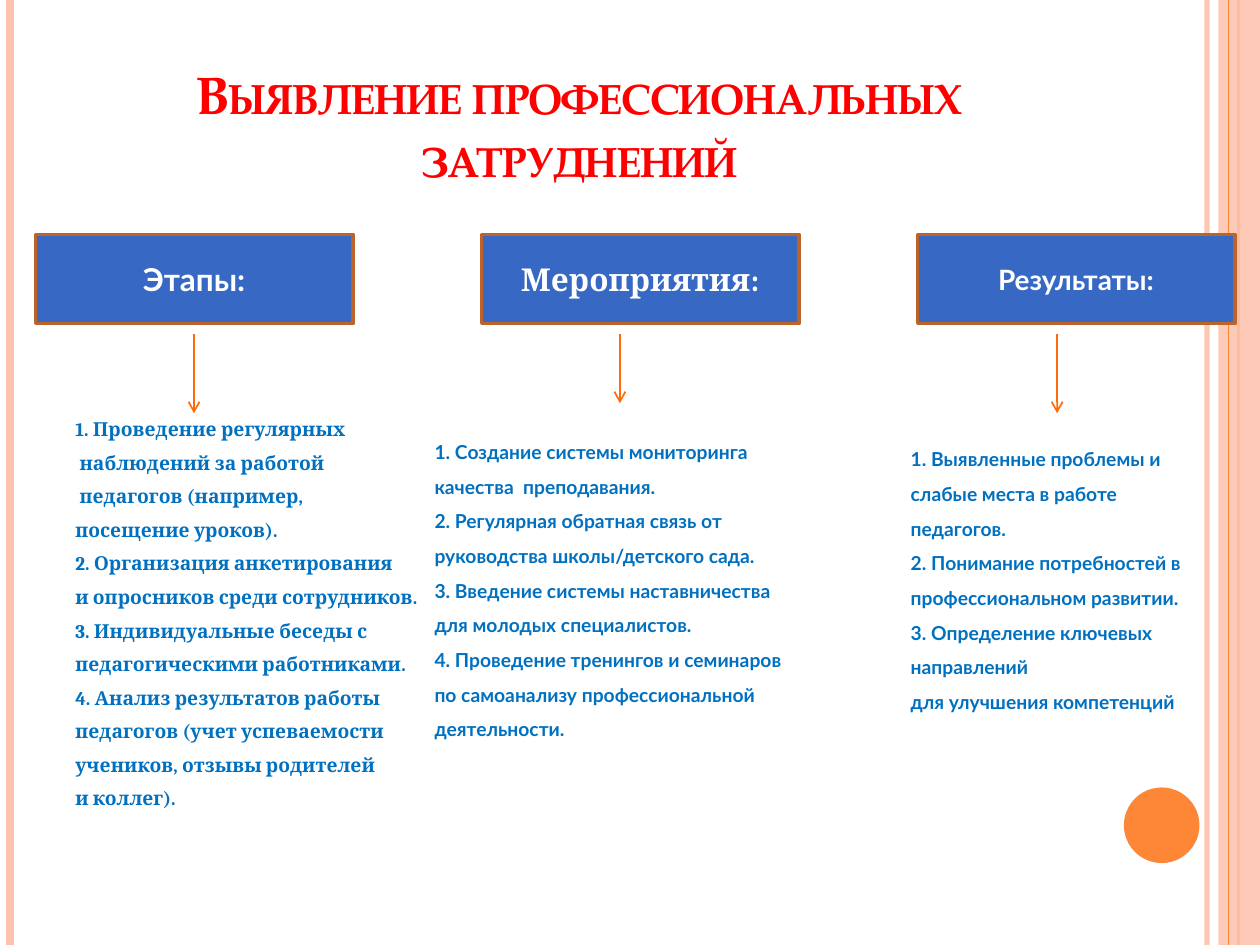
from dataclasses import dataclass
from typing import NamedTuple

from lxml.etree import SubElement
from pptx import Presentation
from pptx.dml.color import RGBColor
from pptx.enum.shapes import MSO_CONNECTOR as Connector, MSO_SHAPE as Preset
from pptx.enum.text import MSO_ANCHOR as Anchor, MSO_AUTO_SIZE as AutoSize, PP_ALIGN as Align
from pptx.oxml.ns import qn
from pptx.util import Inches, Pt


@dataclass(frozen=True)
class Theme:
    title: str = "FF0000"
    body: str = "0070C0"
    header_text: str = "FFFFFF"
    header_fill: str = "3668C4"
    header_border: str = "BC6329"
    arrow: str = "FF6B0A"
    orange: str = "FE8637"
    peach: str = "FEC3AE"
    sans: str = "Lato"
    serif: str = "Cambria"
    title_font: str = "TeX Gyre Pagella"
    title_size: float = 30
    body_size: float = 11


THEME = Theme()


class Area(NamedTuple):
    left: float
    top: float
    width: float
    height: float


class Stripe(NamedTuple):
    x: float
    color: str
    weight: float
    opacity: int = 100


@dataclass(frozen=True)
class Column:
    heading: str
    heading_font: str
    heading_size: float
    header_left: float
    arrow_x: float
    arrow_end: float
    area: Area
    body_font: str
    spacing: float
    anchor: Anchor
    lines: tuple[str, ...]


STRIPES = (
    Stripe(9.58, THEME.peach, 3, 93),
    Stripe(0.08, THEME.peach, 4.5),
    Stripe(9.83, THEME.orange, 1.5),
)
EDGE_STRIPE = Stripe(9.75, THEME.orange, 0.75)

COLUMNS = (
    Column("Этапы:", THEME.sans, 18, 0.28, 1.54, 3.28,
           Area(0.5, 3.18, 3.1, 3.3), THEME.serif, Pt(19.2), Anchor.TOP, (
               "1. Проведение регулярных",
               " наблюдений за работой",
               " педагогов (например,",
               "посещение уроков).",
               "2. Организация анкетирования",
               "и опросников среди сотрудников.",
               "3. Индивидуальные беседы с",
               "педагогическими работниками.",
               "4. Анализ результатов работы",
               "педагогов (учет успеваемости",
               "учеников, отзывы родителей",
               "и коллег).")),
    Column("Мероприятия:", THEME.serif, 18, 3.82, 4.92, 3.2,
           Area(3.35, 3.06, 2.99, 3.16), THEME.sans, 1.5, Anchor.MIDDLE, (
               "1. Создание системы мониторинга",
               "качества  преподавания.",
               "2. Регулярная обратная связь от",
               "руководства школы/детского сада.",
               "3. Введение системы наставничества",
               "для молодых специалистов.",
               "4. Проведение тренингов и семинаров",
               "по самоанализу профессиональной",
               "деятельности.")),
    Column("Результаты:", THEME.sans, 16, 7.28, 8.39, 3.28,
           Area(7.13, 3.12, 2.36, 2.88), THEME.sans, 1.5, Anchor.MIDDLE, (
               "1. Выявленные проблемы и слабые места в работе педагогов.",
               "2. Понимание потребностей в профессиональном развитии.",
               "3. Определение ключевых направлений",
               "для улучшения компетенций")),
)


def apply(target, formats: dict) -> None:
    for key, value in formats.items():
        setattr(target, key, value)


def set_opacity(element, percent: int) -> None:
    if percent < 100:
        color = next(element.iter(qn("a:srgbClr")))
        SubElement(color, qn("a:alpha")).set("val", str(percent * 1000))


def write(frame, lines: tuple[str, ...], font: str, size: float, color: str,
          anchor: Anchor, align: Align, spacing=None) -> None:
    apply(frame, {"word_wrap": True, "auto_size": AutoSize.NONE, "vertical_anchor": anchor})
    for index, line in enumerate(lines):
        paragraph = frame.paragraphs[0] if index == 0 else frame.add_paragraph()
        apply(paragraph, {"alignment": align, "line_spacing": spacing})
        run = paragraph.add_run()
        run.text = line
        apply(run.font, {"name": font, "size": Pt(size), "bold": True})
        run.font.color.rgb = RGBColor.from_string(color)


def draw_vertical(slide, x: float, top: float, bottom: float, color: str, weight: float):
    connector = slide.shapes.add_connector(
        Connector.STRAIGHT, Inches(x), Inches(top), Inches(x), Inches(bottom))
    connector.line.color.rgb = RGBColor.from_string(color)
    connector.line.width = Pt(weight)
    SubElement(connector._element.spPr, qn("a:effectLst"))
    return connector


def draw_stripe(slide, stripe: Stripe) -> None:
    line = draw_vertical(slide, stripe.x, 0, 7.5, stripe.color, stripe.weight)
    set_opacity(line._element.spPr, stripe.opacity)


def draw_shape(slide, preset: Preset, area: Area, fill: str, opacity: int = 100):
    shape = slide.shapes.add_shape(preset, *map(Inches, area))
    shape.shadow.inherit = False
    shape.fill.solid()
    shape.fill.fore_color.rgb = RGBColor.from_string(fill)
    set_opacity(shape._element.spPr, opacity)
    shape.line.fill.background()
    return shape


def draw_title(slide, text: str, area: Area) -> None:
    title = slide.shapes.title
    apply(title, dict(zip(area._fields, map(Inches, area))))
    write(title.text_frame, (text,), THEME.title_font, THEME.title_size, THEME.title,
          Anchor.BOTTOM, Align.CENTER)
    title.text_frame.paragraphs[0].runs[0].font._element.set("cap", "small")


def draw_column(slide, column: Column) -> None:
    header = draw_shape(slide, Preset.RECTANGLE, Area(column.header_left, 1.86, 2.52, 0.71),
                        THEME.header_fill)
    header.line.color.rgb = RGBColor.from_string(THEME.header_border)
    header.line.width = Pt(2)
    write(header.text_frame, (column.heading,), column.heading_font, column.heading_size,
          THEME.header_text, Anchor.MIDDLE, Align.CENTER)

    details = slide.shapes.add_textbox(*map(Inches, column.area))
    write(details.text_frame, column.lines, column.body_font, THEME.body_size,
          THEME.body, column.anchor, Align.LEFT, column.spacing)

    arrow = draw_vertical(slide, column.arrow_x, 2.65, column.arrow_end, THEME.arrow, 1)
    SubElement(arrow.line._get_or_add_ln(), qn("a:tailEnd")).set("type", "arrow")


def main() -> None:
    deck = Presentation()
    apply(deck, {"slide_width": Inches(10), "slide_height": Inches(7.5)})
    slide = deck.slides.add_slide(deck.slide_layouts[5])
    for stripe in STRIPES:
        draw_stripe(slide, stripe)
    draw_shape(slide, Preset.RECTANGLE, Area(9.67, 0, 0.33, 7.5), THEME.peach, 87)
    draw_stripe(slide, EDGE_STRIPE)
    draw_shape(slide, Preset.OVAL, Area(8.92, 6.25, 0.6, 0.6), THEME.orange)
    draw_title(slide, "Выявление профессиональных затруднений", Area(0.51, 0.29, 8.17, 1.25))
    for column in COLUMNS:
        draw_column(slide, column)
    deck.save("out.pptx")


if __name__ == "__main__":
    main()
